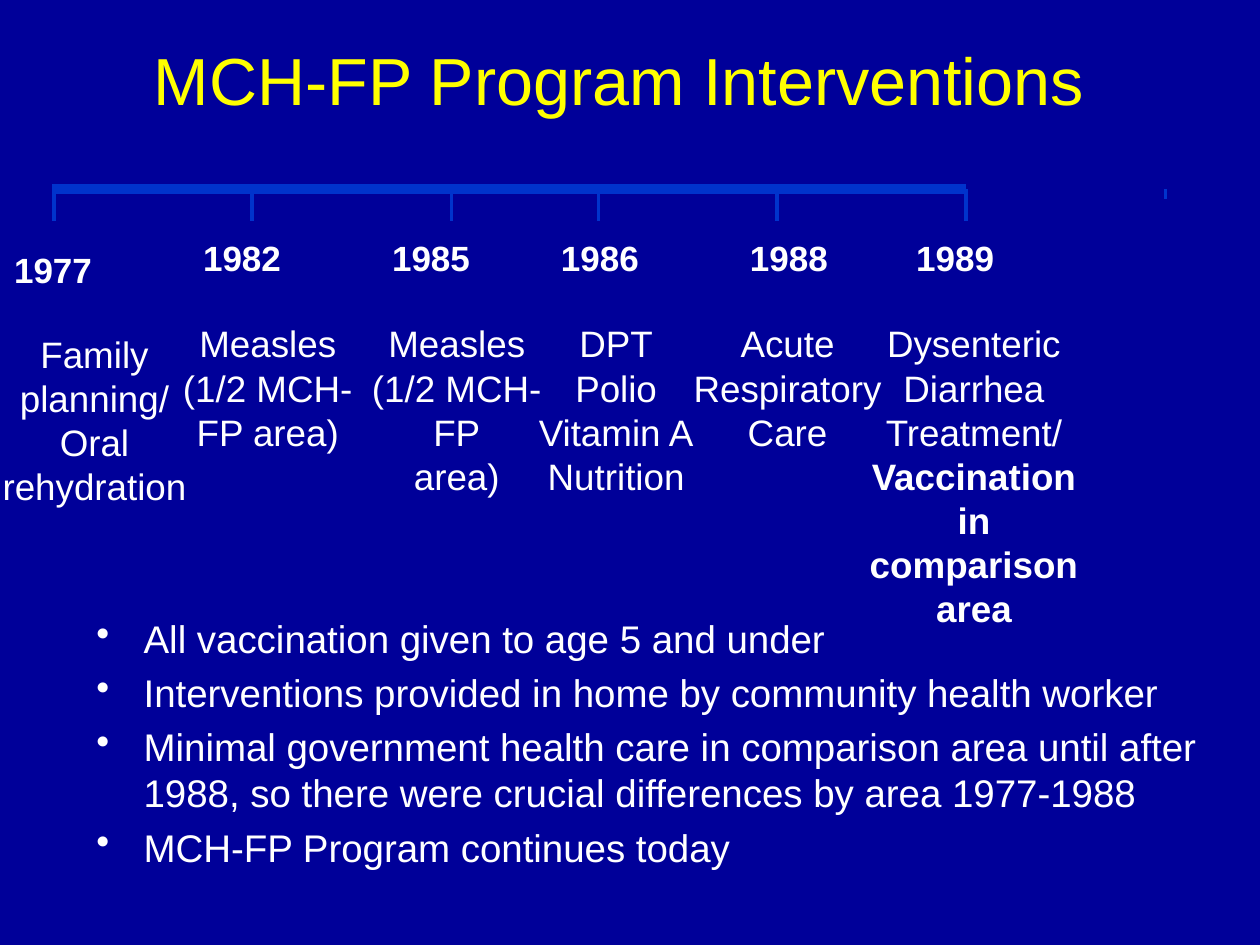
from pptx import Presentation
from pptx.dml.color import RGBColor
from pptx.enum.shapes import MSO_CONNECTOR
from pptx.enum.text import MSO_ANCHOR, PP_ALIGN
from pptx.oxml.ns import qn
from pptx.util import Pt
from lxml import etree

LEFT, CENTER, RIGHT = PP_ALIGN.LEFT, PP_ALIGN.CENTER, PP_ALIGN.RIGHT
TOP, MIDDLE = MSO_ANCHOR.TOP, MSO_ANCHOR.MIDDLE
STRAIGHT = MSO_CONNECTOR.STRAIGHT

COLORS = {"background": "000099", "title": "FFFF00", "text": "FFFFFF", "axis": "0033CC"}
FONT = "Arial"
AXIS_Y = 108
TICK_LENGTH = 18
YEAR_TOP, DETAIL_TOP = 131.8, 180

# year, tick x, year left, detail left, detail width, detail height, drop of (year, detail), lines
MILESTONES = [
    ("1977", 31, 0.7, -6, 120, 108, (6.4, 6), ["Family planning/", "Oral rehydration"]),
    ("1982", 144, 108.7, 96, 114, 108.7, (0, 0), ["Measles", "(1/2 MCH-FP area)"]),
    ("1985", 258, 216.7, 204, 114, 108.7, (0, 0), ["Measles", "(1/2 MCH-FP", "area)"]),
    ("1986", 342, 313.2, 296.6, 111, 108, (0, 0), ["DPT\vPolio", "Vitamin A", "Nutrition"]),
    ("1988", 444, 421.2, 384, 132, 82.8, (0, 0), ["Acute", "Respiratory Care"]),
    ("1989", 552, 516.2, 489, 135, 184.3, (0, 0),
     ["Dysenteric Diarrhea Treatment/", "Vaccination", "in comparison area"]),
]
BOLD_DETAILS = {"Vaccination", "in comparison area"}
NOTES = [
    "All vaccination given to age 5 and under",
    "Interventions provided in home by community health worker",
    "Minimal government health care in comparison area until after 1988, "
    "so there were crucial differences by area 1977-1988",
    "MCH-FP Program continues today",
]


def add_text(slide, box, lines, size, align=CENTER, color="text", bold=(), wrap=True, anchor=TOP):
    """Add a text box with one paragraph per line; lines found in bold are set bold."""
    frame = slide.shapes.add_textbox(*map(Pt, box)).text_frame
    frame.word_wrap = wrap
    frame.vertical_anchor = anchor
    for index, line in enumerate(lines):
        paragraph = frame.paragraphs[0] if index == 0 else frame.add_paragraph()
        paragraph.text = line
        paragraph.alignment = align
        font_format = {"name": FONT, "size": Pt(size), "bold": line in bold}
        for attribute, value in font_format.items():
            setattr(paragraph.font, attribute, value)
        paragraph.font.color.rgb = RGBColor.from_string(COLORS[color])
    return frame


def add_line(slide, start, end, width):
    line = slide.shapes.add_connector(STRAIGHT, *map(Pt, (*start, *end)))
    line.line.width = Pt(width)
    line.line.color.rgb = RGBColor.from_string(COLORS["axis"])
    etree.SubElement(line._element.spPr, qn("a:effectLst"))


def add_tick(slide, x, length=TICK_LENGTH):
    add_line(slide, (x, AXIS_Y), (x, AXIS_Y + length), 2.25)


def add_milestone(slide, milestone):
    year, tick_x, year_left, left, width, height, (year_drop, detail_drop), details = milestone
    add_tick(slide, tick_x)
    add_text(slide, (year_left, YEAR_TOP + year_drop, 59, 31), [year], 20,
             align=RIGHT, bold={year}, wrap=False)
    add_text(slide, (left, DETAIL_TOP + detail_drop, width, height), details, 21,
             bold=BOLD_DETAILS)


def add_bullets(slide, box, lines, size, indent=27):
    frame = add_text(slide, box, lines, size, align=LEFT)
    for paragraph in frame.paragraphs:
        paragraph.space_before = Pt(4.5)
        properties = paragraph._p.get_or_add_pPr()
        properties.set("marL", str(Pt(indent)))
        properties.set("indent", str(-Pt(indent)))
        bullet = etree.Element(qn("a:buChar"), char="•")
        properties.find(qn("a:defRPr")).addprevious(bullet)


def main():
    presentation = Presentation()
    presentation.slide_width, presentation.slide_height = Pt(720), Pt(540)
    slide = presentation.slides.add_slide(presentation.slide_layouts[6])
    slide.background.fill.solid()
    slide.background.fill.fore_color.rgb = RGBColor.from_string(COLORS["background"])

    add_text(slide, (30, 0, 648, 90), ["MCH-FP Program Interventions"], 38,
             color="title", anchor=MIDDLE)
    add_bullets(slide, (48, 348, 648, 130), NOTES, 22)
    add_line(slide, (30, AXIS_Y), (552, AXIS_Y), 6)
    for milestone in MILESTONES:
        add_milestone(slide, milestone)
    add_tick(slide, 666, length=6)

    presentation.save("out.pptx")


if __name__ == "__main__":
    main()
